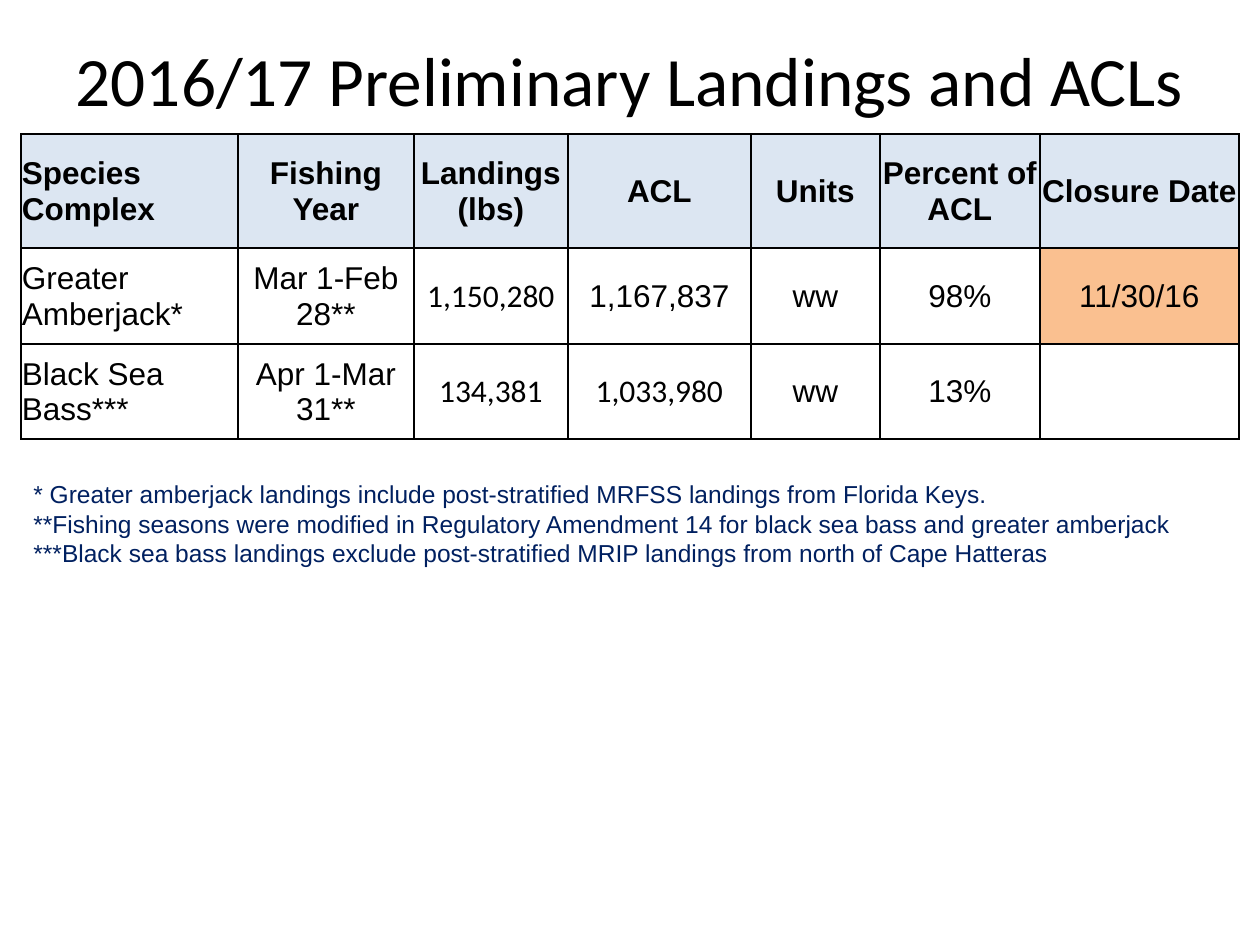
from lxml import etree
from pptx import Presentation
from pptx.dml.color import RGBColor
from pptx.enum.text import MSO_ANCHOR, MSO_AUTO_SIZE, PP_ALIGN
from pptx.oxml.ns import qn
from pptx.util import Emu, Pt

LEFT, CENTER = PP_ALIGN.LEFT, PP_ALIGN.CENTER
MIDDLE = MSO_ANCHOR.MIDDLE
NO_AUTOFIT = MSO_AUTO_SIZE.NONE

BLACK = RGBColor(0x00, 0x00, 0x00)
NAVY = RGBColor(0x00, 0x20, 0x60)
WHITE = RGBColor(0xFF, 0xFF, 0xFF)
PALE_BLUE = RGBColor(0xDC, 0xE6, 0xF2)
ORANGE = RGBColor(0xFA, 0xC0, 0x90)

PX_PER_INCH = 126
COL_WIDTHS = [217, 176, 154, 183, 129, 160, 199]
ROW_HEIGHTS = [114, 96, 95]
LANDINGS = [
    ["Species Complex", "Fishing Year", "Landings (lbs)", "ACL", "Units",
     "Percent of ACL", "Closure Date"],
    ["Greater Amberjack*", "Mar 1-Feb 28**", "1,150,280", "1,167,837", "ww",
     "98%", "11/30/16"],
    ["Black Sea Bass***", "Apr 1-Mar 31**", "134,381", "1,033,980", "ww",
     "13%", ""],
]
CALIBRI_CELLS = {(1, 2), (2, 2), (2, 3)}
CLOSED_CELL = (1, 6)
FOOTNOTES = [
    "* Greater amberjack landings include post-stratified MRFSS landings from Florida Keys.",
    "**Fishing seasons were modified in Regulatory Amendment 14 for black sea bass and greater amberjack",
    "***Black sea bass landings exclude post-stratified MRIP landings from north of Cape Hatteras",
]


def px(n):
    """Turn whole pixels into EMU."""
    return Emu(round(n * 914400 / PX_PER_INCH))


def set_font(p, name, size, color, bold=False):
    """Format a whole paragraph."""
    font = p.font
    font.name, font.size, font.bold = name, Pt(size), bold
    font.color.rgb = color


def add_title(s, text):
    """Move and fill the title placeholder."""
    title = s.shapes.title
    title.left, title.top, title.width, title.height = px(21), px(0), px(1218), px(158)
    tf = title.text_frame
    tf.text = text
    tf.auto_size = NO_AUTOFIT
    tf.vertical_anchor = MIDDLE
    p = tf.paragraphs[0]
    p.alignment = CENTER
    set_font(p, "Calibri", 39.6, BLACK)


def add_borders(cell):
    """Draw a thin black line on each side of a cell."""
    tc_pr = cell._tc.get_or_add_tcPr()
    for i, side in enumerate(("lnL", "lnR", "lnT", "lnB")):
        ln = etree.Element(qn(f"a:{side}"), w=str(Pt(1)))
        fill = etree.SubElement(ln, qn("a:solidFill"))
        etree.SubElement(fill, qn("a:srgbClr"), val=str(BLACK))
        tc_pr.insert(i, ln)


def fill_cell(cell, row, col, text):
    """Write and format one table cell."""
    cell.text = text
    cell.vertical_anchor = MIDDLE
    cell.margin_left = cell.margin_right = cell.margin_top = px(1)
    cell.margin_bottom = 0
    p = cell.text_frame.paragraphs[0]
    p.alignment = CENTER if col else LEFT
    name = "Calibri" if (row, col) in CALIBRI_CELLS else "Arial"
    set_font(p, name, 18, BLACK, bold=row == 0)
    cell.fill.solid()
    if row == 0:
        cell.fill.fore_color.rgb = PALE_BLUE
    else:
        cell.fill.fore_color.rgb = ORANGE if (row, col) == CLOSED_CELL else WHITE
    add_borders(cell)


def add_landings_table(s):
    """Add the table of landings and catch limits."""
    table = s.shapes.add_table(len(ROW_HEIGHTS), len(COL_WIDTHS), px(21), px(134),
                               px(sum(COL_WIDTHS)), px(sum(ROW_HEIGHTS))).table
    table.first_row = table.horz_banding = False
    for column, width in zip(table.columns, COL_WIDTHS):
        column.width = px(width)
    for row, height in zip(table.rows, ROW_HEIGHTS):
        row.height = px(height)
    for r, texts in enumerate(LANDINGS):
        for c, text in enumerate(texts):
            fill_cell(table.cell(r, c), r, c, text)


def add_footnotes(s):
    """Add the notes below the table."""
    tf = s.shapes.add_textbox(px(21), px(473), px(1168), px(161)).text_frame
    tf.word_wrap = False
    for i, note in enumerate(FOOTNOTES):
        p = tf.add_paragraph() if i else tf.paragraphs[0]
        p.text = note
        set_font(p, "Arial", 14, NAVY)


def main():
    """Build and save the slide."""
    prs = Presentation()
    prs.slide_width, prs.slide_height = px(1260), px(945)
    s = prs.slides.add_slide(prs.slide_layouts[5])
    add_title(s, "2016/17 Preliminary Landings and ACLs")
    add_footnotes(s)
    add_landings_table(s)
    prs.save("out.pptx")


if __name__ == "__main__":
    main()
